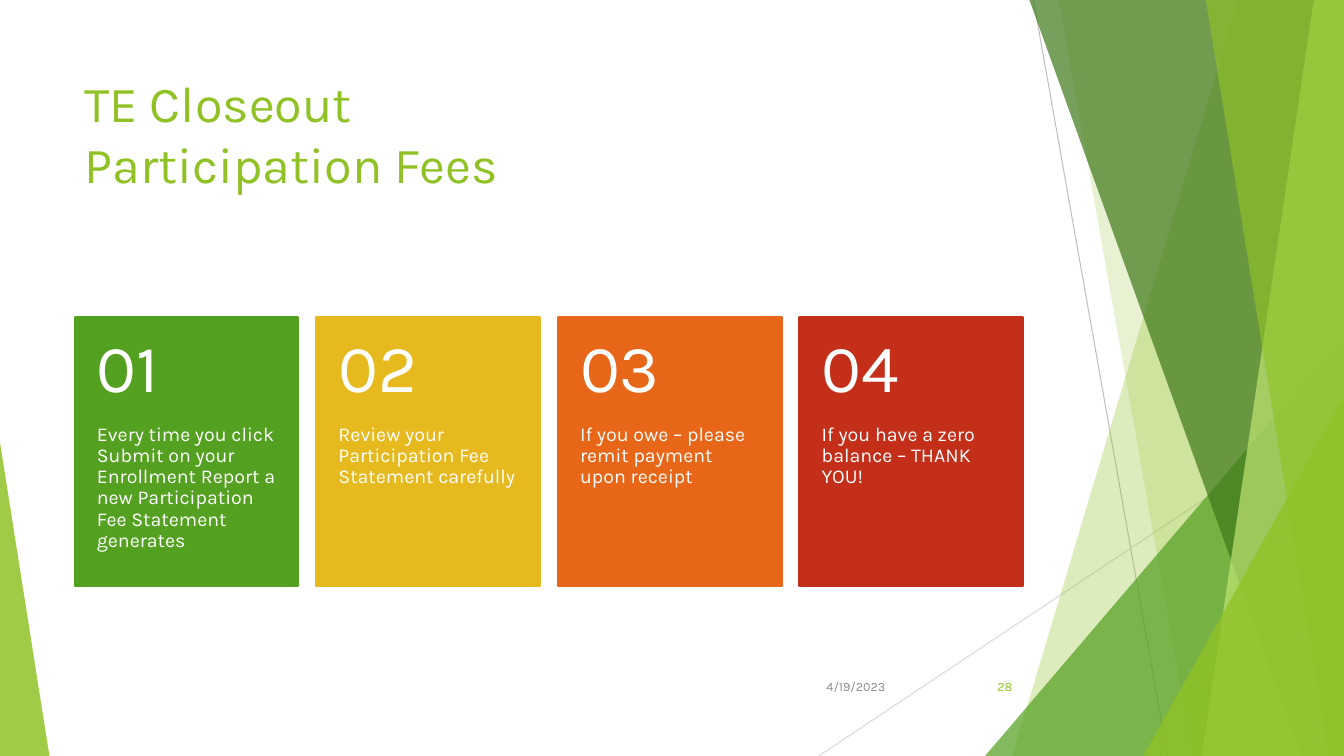
from lxml.etree import SubElement
from pptx import Presentation
from pptx.dml.color import RGBColor
from pptx.enum.shapes import MSO_CONNECTOR as Link, MSO_SHAPE as Shape
from pptx.enum.text import MSO_ANCHOR as Anchor, PP_ALIGN as Align
from pptx.oxml.ns import qn
from pptx.util import Inches, Pt

LIME = RGBColor(0x90, 0xC2, 0x26)
GREEN = RGBColor(0x54, 0xA0, 0x21)
PINE = RGBColor(0x3F, 0x78, 0x19)
PALE = RGBColor(0xC0, 0xE4, 0x74)
GOLD = RGBColor(0xE6, 0xB9, 0x1E)
ORANGE = RGBColor(0xE7, 0x66, 0x18)
RED = RGBColor(0xC4, 0x2F, 0x1A)
WHITE = RGBColor(0xFF, 0xFF, 0xFF)
GRAY = RGBColor(0x8C, 0x8C, 0x8C)
SILVER = RGBColor(0xBF, 0xBF, 0xBF)
MIST = RGBColor(0xD9, 0xD9, 0xD9)

WIDTH, HEIGHT = 13.33, 7.5
LEFT, LAST, TOP = 0.74, 7.93, 3.15
CARD_W, CARD_H, HEAD_H = 2.22, 2.66, 1.06

CARDS = [
    (GREEN, "Every time you click Submit on your Enrollment Report "
            "a new Participation Fee Statement generates"),
    (GOLD, "Review your Participation Fee Statement carefully"),
    (ORANGE, "If you owe – please remit payment upon receipt"),
    (RED, "If you have a zero balance – THANK YOU!"),
]


def put(target, values):
    for name, value in values.items():
        setattr(target, name, value)


class Deck:
    font = "Karla"

    def __init__(self):
        self.show = Presentation()
        put(self.show, {"slide_width": Inches(WIDTH), "slide_height": Inches(HEIGHT)})
        self.slide = self.show.slides.add_slide(self.show.slide_layouts[6])
        self.shapes = self.slide.shapes

    def paint(self, shape, color, alpha=100):
        shape.shadow.inherit = False
        shape.fill.solid()
        shape.fill.fore_color.rgb = color
        shape.line.fill.background()
        if alpha < 100:
            tone = shape.fill._xPr.find(qn("a:solidFill"))[0]
            SubElement(tone, qn("a:alpha"), val=str(alpha * 1000))

    def line(self, start, end, color):
        ends = [Inches(n) for n in start + end]
        link = self.shapes.add_connector(Link.STRAIGHT, *ends)
        link.line.color.rgb = color
        link.line.width = Pt(0.75)
        SubElement(link._element.spPr, qn("a:effectLst"))

    def band(self, top, base, color, alpha):
        points = [(top, 0), (WIDTH, 0), (WIDTH, HEIGHT), (base, HEIGHT)]
        first, *rest = [(Inches(x), Inches(y)) for x, y in points]
        form = self.shapes.build_freeform(*first)
        form.add_line_segments(rest)
        self.paint(form.convert_to_shape(), color, alpha)

    def wedge(self, left, top, width, tip, color, alpha):
        box = [Inches(n) for n in (left, top, width, HEIGHT - top)]
        shape = self.shapes.add_shape(Shape.ISOSCELES_TRIANGLE, *box)
        shape.adjustments[0] = tip
        self.paint(shape, color, alpha)

    def text(self, words, box, size, color, inset=(0.1, 0.05, 0.1, 0.05),
             anchor=Anchor.TOP, align=Align.LEFT, space=1.0):
        frame = self.shapes.add_textbox(*[Inches(n) for n in box]).text_frame
        sides = ("margin_left", "margin_top", "margin_right", "margin_bottom")
        put(frame, dict(zip(sides, [Inches(n) for n in inset])))
        put(frame, {"word_wrap": True, "vertical_anchor": anchor})
        para = frame.paragraphs[0]
        para.text = words
        put(para, {"alignment": align, "line_spacing": space})
        for run in para.runs:
            put(run.font, {"name": self.font, "size": Pt(size)})
            run.font.color.rgb = color

    def card(self, left, number, color, words):
        box = [Inches(n) for n in (left, TOP, CARD_W, CARD_H)]
        shape = self.shapes.add_shape(Shape.RECTANGLE, *box)
        self.paint(shape, color)
        shape.line.color.rgb = color
        shape.line.width = Pt(1.5)
        self.text(words, (left, TOP + HEAD_H, CARD_W, CARD_H - HEAD_H), 14, WHITE,
                  (0.22, 0, 0.22, 0.36), space=0.9)
        self.text(f"{number:02}", (left, TOP, CARD_W, HEAD_H), 48, WHITE,
                  (0.22, 0.18, 0.22, 0.18), Anchor.MIDDLE, space=0.9)


def main():
    deck = Deck()
    deck.line((10.25, 0), (11.58, HEIGHT), SILVER)
    deck.line((WIDTH, 4.03), (8.12, HEIGHT), MIST)
    deck.band(12.28, 10.04, LIME, 30)
    deck.band(10.5, 11.83, LIME, 20)
    deck.wedge(9.77, 3.33, 3.56, 1, GREEN, 72)
    deck.band(10.21, 12.91, PINE, 70)
    deck.band(13.03, 11.92, PALE, 70)
    deck.band(11.96, 13.18, LIME, 65)
    deck.wedge(11.34, 3.93, 1.99, 1, LIME, 80)
    deck.wedge(0, 4.39, 0.49, 0, LIME, 85)

    deck.text("TE Closeout\vParticipation Fees", (LEFT, 0.67, 9.4, 1.44), 36, LIME)
    foot = {"anchor": Anchor.MIDDLE, "align": Align.RIGHT}
    deck.text("4/19/2023", (7.88, 6.61, 1, 0.4), 9, GRAY, **foot)
    deck.text("28", (9.39, 6.61, 0.75, 0.4), 9, LIME, **foot)

    step = (LAST - LEFT) / (len(CARDS) - 1)
    for i, (color, words) in enumerate(CARDS):
        deck.card(LEFT + i * step, i + 1, color, words)
    deck.show.save("out.pptx")


if __name__ == "__main__":
    main()
